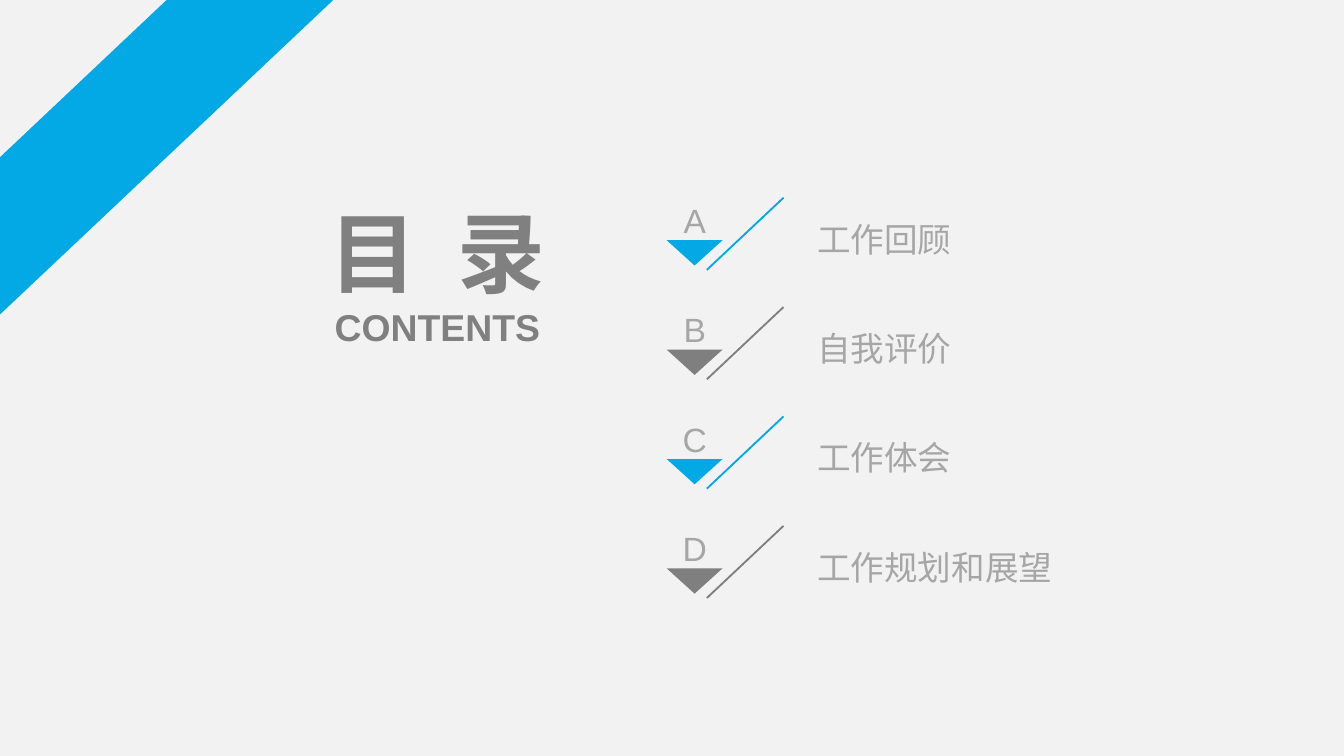
from lxml import etree
from pptx import Presentation
from pptx.dml.color import RGBColor
from pptx.enum.shapes import MSO_CONNECTOR, MSO_SHAPE
from pptx.enum.text import MSO_ANCHOR, MSO_AUTO_SIZE, PP_ALIGN
from pptx.oxml.ns import qn
from pptx.util import Inches, Pt

STRAIGHT = MSO_CONNECTOR.STRAIGHT
STRIPE = MSO_SHAPE.DIAGONAL_STRIPE
TOP, MIDDLE, BOTTOM = MSO_ANCHOR.TOP, MSO_ANCHOR.MIDDLE, MSO_ANCHOR.BOTTOM
LEFT, CENTER = PP_ALIGN.LEFT, PP_ALIGN.CENTER
GROW = MSO_AUTO_SIZE.SHAPE_TO_FIT_TEXT

PAPER = RGBColor(0xF2, 0xF2, 0xF2)
BLUE = RGBColor(0x02, 0xA9, 0xE4)
GRAY = RGBColor(0x7F, 0x7F, 0x7F)
HEADING_GRAY = RGBColor(0x80, 0x80, 0x80)
LIGHT_GRAY = RGBColor(0xA6, 0xA6, 0xA6)

FONT = "Arial"
TITLE_ONLY = 5
SLIDE_WIDTH = Inches(10)
SLIDE_HEIGHT = SLIDE_WIDTH * 9 // 16
SLIDE_BOX = (0, 0, SLIDE_WIDTH, SLIDE_HEIGHT)
ROW_PITCH = 14.47
TOPICS = ["工作回顾", "自我评价", "工作体会", "工作规划和展望"]


def within(box, x, y, width, height):
    """Return the part of a box given in percent of its width and height."""
    left, top, full_width, full_height = box
    return (
        round(left + full_width * x / 100),
        round(top + full_height * y / 100),
        round(full_width * width / 100),
        round(full_height * height / 100),
    )


def place(shape, box):
    """Move and size a shape to fill a box."""
    shape.left, shape.top, shape.width, shape.height = box


def write(shape, text, size, color, bold=False, align=LEFT, anchor=TOP, tracking=0):
    """Fill a shape with one formatted line of text."""
    frame = shape.text_frame
    frame.word_wrap = True
    frame.auto_size = GROW
    frame.vertical_anchor = anchor
    frame.margin_left = frame.margin_right = 0
    frame.margin_top = frame.margin_bottom = 0
    paragraph = frame.paragraphs[0]
    paragraph.alignment = align
    run = paragraph.add_run()
    run.text = text
    run.font.name = FONT
    run.font.size = Pt(size)
    run.font.bold = bold
    run.font.color.rgb = color
    if tracking:
        run.font._element.set("spc", str(round(tracking * 100)))


def paint(shape, color):
    """Give a shape a flat fill without outline or shadow."""
    shape.shadow.inherit = False
    shape.fill.solid()
    shape.fill.fore_color.rgb = color
    shape.line.fill.background()


def add_heading(slide, box):
    """Place the title and its English subtitle."""
    title = slide.shapes.title
    place(title, within(box, 0, 0, 100, 70))
    write(title, "目 录", 47, HEADING_GRAY, bold=True, align=CENTER,
          anchor=MIDDLE, tracking=5.25)
    subtitle = slide.shapes.add_textbox(*within(box, 0, 70, 100, 30))
    write(subtitle, "CONTENTS", 20, HEADING_GRAY, bold=True, align=CENTER)


def add_topic(slide, box, letter, topic, accent):
    """Place one lettered topic with its triangle and slanted line."""
    parts = slide.shapes.add_group_shape().shapes

    label = parts.add_textbox(*within(box, 32.1, 29, 67.9, 55.6))
    write(label, topic, 18, LIGHT_GRAY, anchor=MIDDLE)

    left, top, width, height = within(box, 8.8, 0, 16.2, 100)
    slant = parts.add_connector(STRAIGHT, left + width, top, left, top + height)
    slant.line.color.rgb = accent
    slant.line.width = Pt(1)
    etree.SubElement(slant._element.spPr, qn("a:effectLst"))

    left, top, width, height = within(box, 0.3, 59, 11.8, 35)
    outline = parts.build_freeform(left, top)
    outline.add_line_segments(
        [(left + width, top), (left + width // 2, top + height)], close=True)
    paint(outline.convert_to_shape(), accent)

    marker = parts.add_textbox(*within(box, 0, 3, 12.5, 55.6))
    write(marker, letter, 18, LIGHT_GRAY, align=CENTER, anchor=BOTTOM)


def add_corner_stripe(slide, box):
    """Place the diagonal stripe across the corner."""
    paint(slide.shapes.add_shape(STRIPE, *box), BLUE)


def main():
    """Build the contents slide."""
    deck = Presentation()
    deck.slide_width, deck.slide_height = SLIDE_WIDTH, SLIDE_HEIGHT
    slide = deck.slides.add_slide(deck.slide_layouts[TITLE_ONLY])
    slide.background.fill.solid()
    slide.background.fill.fore_color.rgb = PAPER

    add_heading(slide, within(SLIDE_BOX, 21.35, 26.2, 22.4, 20.1))
    for row, (letter, topic) in enumerate(zip("ABCD", TOPICS)):
        box = within(SLIDE_BOX, 49.5, 26.15 + row * ROW_PITCH, 35.2, 9.55)
        add_topic(slide, box, letter, topic, GRAY if row % 2 else BLUE)
    add_corner_stripe(slide, within(SLIDE_BOX, 0, 0, 24.8, 41.6))

    deck.save("out.pptx")


if __name__ == "__main__":
    main()
